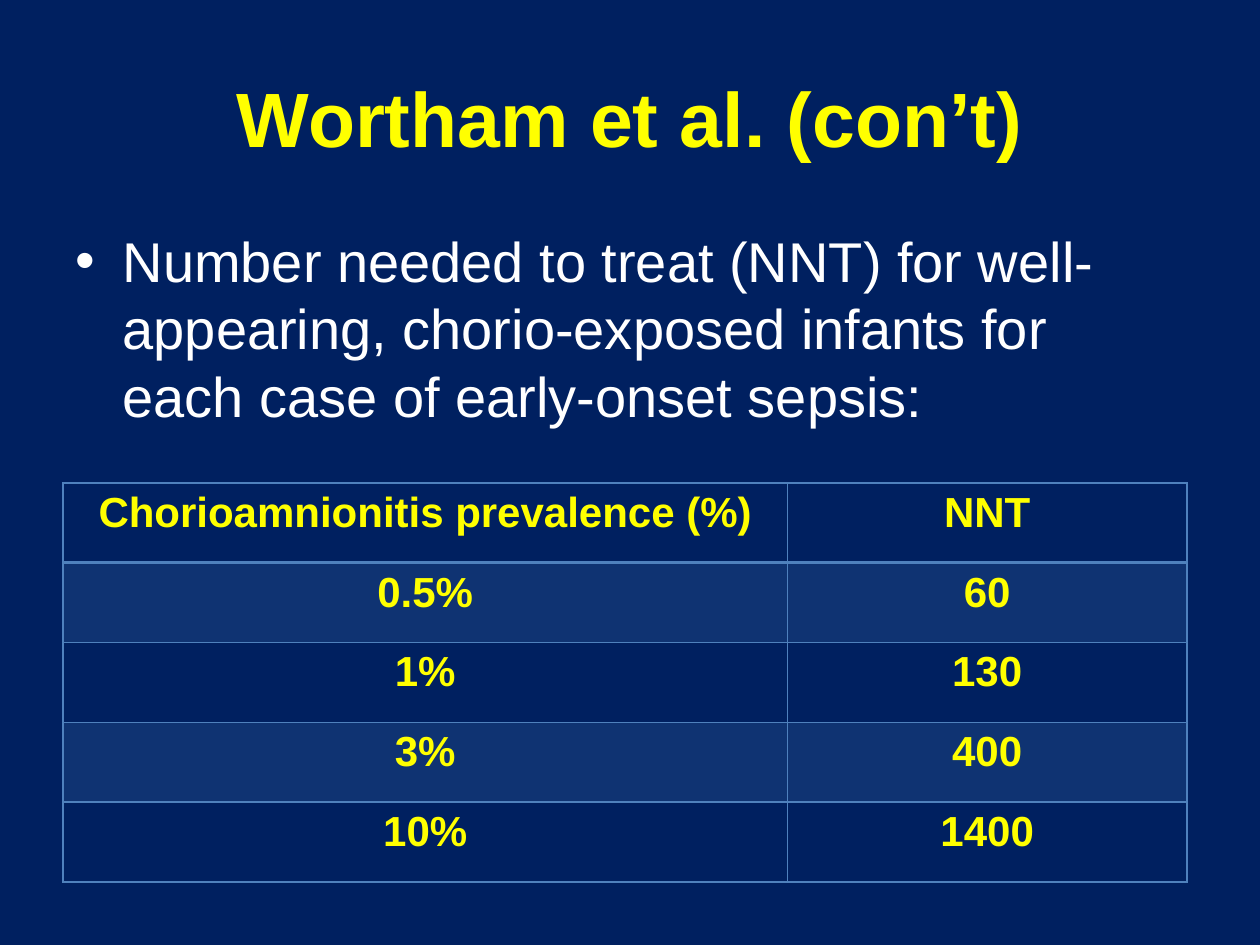
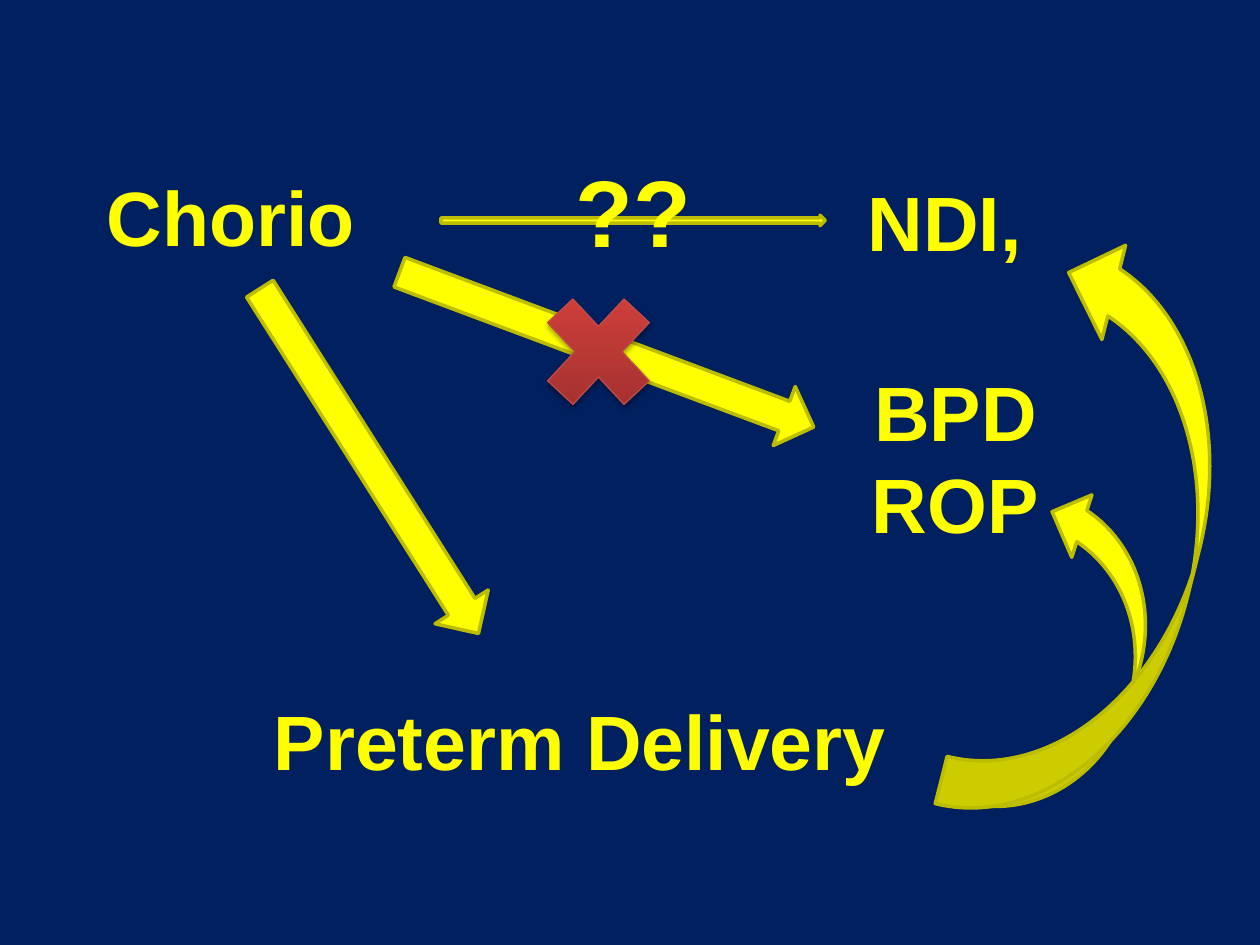
from typing import Any, NamedTuple

from lxml.etree import SubElement
from pptx import Presentation
from pptx.dml.color import RGBColor
from pptx.enum.shapes import MSO_SHAPE as Preset
from pptx.enum.text import MSO_ANCHOR as Anchor, PP_ALIGN as Align
from pptx.oxml.ns import qn
from pptx.util import Pt

NAVY, YELLOW, OLIVE, WHITE, BLUE = "002060", "FFFF00", "BDBD00", "FFFFFF", "4F81BD"
HEADING = {"name": "Arial", "size": Pt(44), "bold": True}
CELL = HEADING | {"size": Pt(24)}
BODY = {"name": "Arial", "size": Pt(32), "bold": False}
QUESTION = HEADING | {"size": Pt(54)}

NNT_ROWS = [
    ("Chorioamnionitis prevalence (%)", "NNT"),
    ("0.5%", "60"),
    ("1%", "130"),
    ("3%", "400"),
    ("10%", "1400"),
]
COLUMN_WIDTHS = (414, 228.24)
ROW_HEIGHT = 45.6


class Frame(NamedTuple):
    """Left, top, width and height in points."""

    left: float
    top: float
    width: float
    height: float

    def lengths(self) -> list[Pt]:
        """Return the four measures as lengths."""
        return [Pt(value) for value in self]


class Label(NamedTuple):
    """A centred heading of one or more lines."""

    lines: tuple[str, ...]
    frame: Frame
    style: dict[str, Any] = HEADING


class Arrow(NamedTuple):
    """A yellow block arrow turned by some degrees."""

    preset: Preset
    frame: Frame
    rotation: float = 0


TITLE = Label(("Wortham et al. (con’t)",), Frame(36, 21.6, 648, 90))
CAUSES = [
    Label(("Chorio",), Frame(30, 78, 204, 90)),
    Label(("NDI, ",), Frame(444, 81, 204, 90)),
    Label(("BPD", "ROP"), Frame(444, 216, 204, 90)),
    Label(("Preterm Delivery",), Frame(145.5, 377.5, 372, 90)),
]
QUESTION_MARKS = Label(("??",), Frame(260, 75, 204, 90), QUESTION)
STRAIGHT_ARROWS = [
    Arrow(Preset.RIGHT_ARROW, Frame(252, 123, 219.6, 6)),
    Arrow(Preset.RIGHT_ARROW, Frame(220.3, 181.8, 252.7, 36), 20.5),
    Arrow(Preset.RIGHT_ARROW, Frame(94.3, 245.5, 233.3, 36), 57.6),
]
CURVED_ARROWS = [
    Arrow(Preset.CURVED_UP_ARROW, Frame(517, 340, 192.2, 75), 287.9),
    Arrow(Preset.CURVED_UP_ARROW, Frame(459.5, 252, 340.6, 111), 284.1),
]


def rgb(code: str) -> RGBColor:
    """Turn a hex string into a colour."""
    return RGBColor.from_string(code)


def add_page(deck: Any) -> Any:
    """Add a blank navy page."""
    page = deck.slides.add_slide(deck.slide_layouts[6])
    page.background.fill.solid()
    page.background.fill.fore_color.rgb = rgb(NAVY)
    return page


def write(para: Any, text: str, style: dict[str, Any], colour: str = YELLOW) -> None:
    """Put one formatted span into a paragraph."""
    span = para.add_run()
    span.text = text
    for name, value in style.items():
        setattr(span.font, name, value)
    span.font.color.rgb = rgb(colour)


def add_label(page: Any, label: Label) -> None:
    """Draw a centred heading."""
    frame = page.shapes.add_textbox(*label.frame.lengths()).text_frame
    frame.word_wrap = True
    frame.vertical_anchor = Anchor.MIDDLE
    for index, line in enumerate(label.lines):
        para = frame.add_paragraph() if index else frame.paragraphs[0]
        para.alignment = Align.CENTER
        write(para, line, label.style)


def add_bullet(page: Any, text: str, place: Frame) -> None:
    """Draw a bulleted body paragraph."""
    frame = page.shapes.add_textbox(*place.lengths()).text_frame
    frame.word_wrap = True
    para = frame.paragraphs[0]
    para.space_before = Pt(6.4)
    write(para, text, BODY, WHITE)
    properties = para._p.get_or_add_pPr()
    for name, value in {"marL": Pt(27), "indent": -Pt(27)}.items():
        properties.set(name, str(value))
    SubElement(properties, qn("a:buFont"), typeface="Arial")
    SubElement(properties, qn("a:buChar"), char="•")


def set_border(cell: Any, side: str, width: float) -> None:
    """Draw one blue side of a table cell."""
    properties = cell._tc.get_or_add_tcPr()
    line = SubElement(properties, qn(f"a:ln{side}"), w=str(Pt(width)))
    SubElement(SubElement(line, qn("a:solidFill")), qn("a:srgbClr"), val=BLUE)


def shade(cell: Any, banded: bool) -> None:
    """Tint a banded cell and leave the others clear."""
    if not banded:
        cell.fill.background()
        return
    cell.fill.solid()
    cell.fill.fore_color.rgb = rgb(BLUE)
    colour = cell._tc.tcPr.find(f"{qn('a:solidFill')}/{qn('a:srgbClr')}")
    SubElement(colour, qn("a:alpha"), val="20000")


def add_nnt_table(page: Any, left: float, top: float) -> None:
    """Draw the table of prevalence against number needed to treat."""
    place = Frame(left, top, sum(COLUMN_WIDTHS), ROW_HEIGHT * len(NNT_ROWS))
    table = page.shapes.add_table(
        len(NNT_ROWS), len(COLUMN_WIDTHS), *place.lengths()
    ).table
    table.first_row = table.horz_banding = False
    for column, width in zip(table.columns, COLUMN_WIDTHS):
        column.width = Pt(width)
    for row, texts in enumerate(NNT_ROWS):
        table.rows[row].height = Pt(ROW_HEIGHT)
        for column, text in enumerate(texts):
            cell = table.cell(row, column)
            para = cell.text_frame.paragraphs[0]
            para.alignment = Align.CENTER
            write(para, text, CELL)
            top_width = 2 if row == 1 else 1
            bottom_width = 2 if row == 0 else 1
            for side, width in zip("LRTB", (1, 1, top_width, bottom_width)):
                set_border(cell, side, width)
            shade(cell, row % 2 == 1)


def add_arrow(page: Any, arrow: Arrow) -> None:
    """Draw a yellow block arrow."""
    shape = page.shapes.add_shape(arrow.preset, *arrow.frame.lengths())
    shape.shadow.inherit = False
    shape.rotation = arrow.rotation
    shape.fill.solid()
    shape.fill.fore_color.rgb = rgb(YELLOW)
    shape.line.color.rgb = rgb(OLIVE)
    shape.line.width = Pt(2)


def add_cross(page: Any, place: Frame) -> None:
    """Draw the shaded red cross with its soft shadow."""
    cross = page.shapes.add_shape(Preset.MATH_MULTIPLY, *place.lengths())
    cross.shadow.inherit = False
    cross.fill.gradient()
    cross.fill.gradient_angle = 90
    stops = ((0, "9C2F2D"), (0.8, "CB3E3A"))
    for stop, (position, code) in zip(cross.fill.gradient_stops, stops):
        stop.position = position
        stop.color.rgb = rgb(code)
    cross.line.color.rgb = rgb("BF4C48")
    cross.line.width = Pt(0.75)
    effects = cross._element.spPr.find(qn("a:effectLst"))
    shadow = SubElement(
        effects,
        qn("a:outerShdw"),
        blurRad=str(Pt(3.1)),
        dist=str(Pt(1.8)),
        dir="5400000",
        rotWithShape="0",
    )
    colour = SubElement(shadow, qn("a:srgbClr"), val="000000")
    SubElement(colour, qn("a:alpha"), val="35000")


def build_nnt_page(deck: Any) -> None:
    """Build the page on the number needed to treat."""
    page = add_page(deck)
    add_bullet(
        page,
        "Number needed to treat (NNT) for well-appearing, "
        "chorio-exposed infants for each case of early-onset sepsis:",
        Frame(36, 126, 648, 356.4),
    )
    add_label(page, TITLE)
    add_nnt_table(page, 36, 276)


def build_cause_page(deck: Any) -> None:
    """Build the page that links chorio, preterm delivery and outcomes."""
    page = add_page(deck)
    for label in CAUSES:
        add_label(page, label)
    for arrow in STRAIGHT_ARROWS:
        add_arrow(page, arrow)
    add_cross(page, Frame(300, 156, 84, 90))
    for arrow in CURVED_ARROWS:
        add_arrow(page, arrow)
    add_label(page, QUESTION_MARKS)


def main() -> None:
    """Build and save the deck."""
    deck = Presentation()
    deck.slide_width, deck.slide_height = Pt(720), Pt(540)
    build_nnt_page(deck)
    build_cause_page(deck)
    deck.save("out.pptx")


if __name__ == "__main__":
    main()
